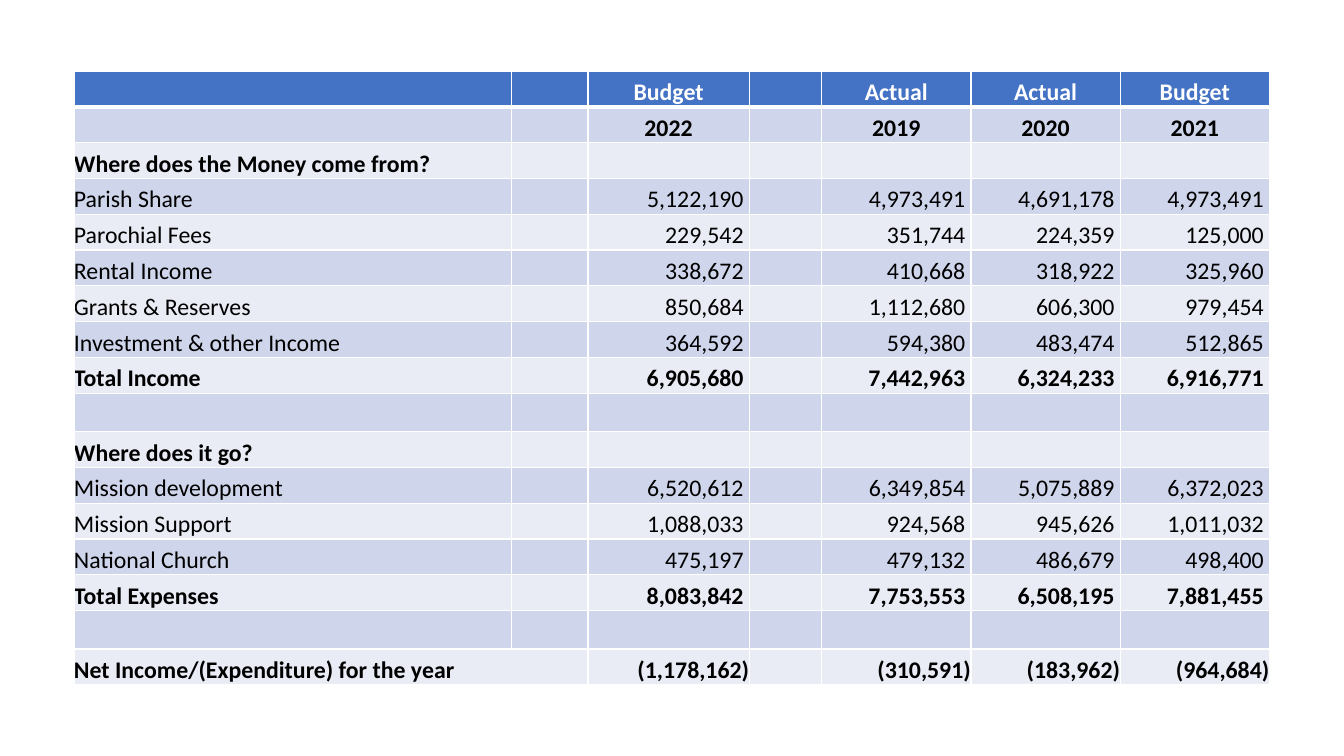
from lxml import etree
from pptx import Presentation
from pptx.dml.color import RGBColor
from pptx.enum import text
from pptx.oxml import ns
from pptx.util import Pt

COLORS = {"header": "4472C4", "dark_band": "CFD5EA", "light_band": "E9EBF5",
          "border": "FFFFFF", "header_text": "FFFFFF", "body_text": "000000"}
COLUMN_WIDTHS = [312.5, 54.7, 115.2, 51.8, 106.6, 106.6, 106.6]
FIGURE_COLUMNS = [2, 4, 5, 6]
ROW_HEIGHT, SPACER_HEIGHT = 25.58, 27.4
HEADING_ROWS = 2

ACCOUNTS = [
    ("", "Budget", "Actual", "Actual", "Budget"),
    ("", "2022", "2019", "2020", "2021"),
    ("Where does the Money come from?",),
    ("Parish Share", "5,122,190", "4,973,491", "4,691,178", "4,973,491"),
    ("Parochial Fees", "229,542", "351,744", "224,359", "125,000"),
    ("Rental Income", "338,672", "410,668", "318,922", "325,960"),
    ("Grants & Reserves", "850,684", "1,112,680", "606,300", "979,454"),
    ("Investment & other Income", "364,592", "594,380", "483,474", "512,865"),
    ("Total Income", "6,905,680", "7,442,963", "6,324,233", "6,916,771"),
    (),
    ("Where does it go?",),
    ("Mission development", "6,520,612", "6,349,854", "5,075,889", "6,372,023"),
    ("Mission Support", "1,088,033", "924,568", "945,626", "1,011,032"),
    ("National Church", "475,197", "479,132", "486,679", "498,400"),
    ("Total Expenses", "8,083,842", "7,753,553", "6,508,195", "7,881,455"),
    (),
    ("Net Income/(Expenditure) for the year",
     "(1,178,162)", "(310,591)", "(183,962)", "(964,684)"),
]


def add_borders(cell, bottom_width):
    """Draw the four borders of a cell."""
    properties = cell._tc.get_or_add_tcPr()
    for side in "LRTB":
        width = bottom_width if side == "B" else 1
        line = etree.SubElement(properties, ns.qn(f"a:ln{side}"), w=str(Pt(width)))
        solid = etree.SubElement(line, ns.qn("a:solidFill"))
        etree.SubElement(solid, ns.qn("a:srgbClr"), val=COLORS["border"])


def style_cell(cell, band, bottom_width):
    """Give a cell its band colour, borders, anchor and margins."""
    add_borders(cell, bottom_width)
    cell.fill.solid()
    cell.fill.fore_color.rgb = RGBColor.from_string(COLORS[band])
    cell.margin_left = cell.margin_right = cell.margin_top = cell.margin_bottom = 0
    cell.vertical_anchor = text.MSO_ANCHOR.BOTTOM


def write_cell(cell, wording, align, color, bold):
    """Write one formatted line into a cell."""
    line = cell.text_frame.paragraphs[0]
    line.text = wording
    line.alignment = align
    for run in line.runs:
        run.font.name = "Calibri"
        run.font.size = Pt(17)
        run.font.bold = bold
        run.font.color.rgb = RGBColor.from_string(COLORS[color])


def is_bold(row, entry):
    """Tell headings, questions, totals and the net line from plain items."""
    return (row < HEADING_ROWS or len(entry) == 1
            or entry[0].startswith(("Total", "Net")))


def fill_row(accounts, row, entry):
    """Style one row and write its label and figures."""
    band = "header" if row == 0 else "dark_band" if row % 2 else "light_band"
    color = "header_text" if row == 0 else "body_text"
    accounts.rows[row].height = Pt(ROW_HEIGHT if entry else SPACER_HEIGHT)
    for column in range(len(COLUMN_WIDTHS)):
        style_cell(accounts.cell(row, column), band, 3 if row == 0 else 1)
    if not entry:
        return
    label, *figures = entry
    bold = is_bold(row, entry)
    if label:
        write_cell(accounts.cell(row, 0), label, text.PP_ALIGN.LEFT, color, bold)
    align = text.PP_ALIGN.CENTER if row < HEADING_ROWS else text.PP_ALIGN.RIGHT
    for column, figure in zip(FIGURE_COLUMNS, figures):
        cell = accounts.cell(row, column)
        write_cell(cell, figure, align, color, bold)
        if row >= HEADING_ROWS and not figure.startswith("("):
            cell.margin_right = Pt(4)


def add_accounts(slide):
    """Add the table of income and expenses."""
    height = sum(ROW_HEIGHT if entry else SPACER_HEIGHT for entry in ACCOUNTS)
    accounts = slide.shapes.add_table(
        len(ACCOUNTS), len(COLUMN_WIDTHS), Pt(52.8), Pt(50.8),
        Pt(sum(COLUMN_WIDTHS)), Pt(height)).table
    for column, width in zip(accounts.columns, COLUMN_WIDTHS):
        column.width = Pt(width)
    for row, entry in enumerate(ACCOUNTS):
        fill_row(accounts, row, entry)
    net_row = len(ACCOUNTS) - 1
    accounts.cell(net_row, 0).merge(accounts.cell(net_row, 1))


def main():
    """Build and save the slide."""
    deck = Presentation()
    deck.slide_width, deck.slide_height = Pt(960), Pt(540)
    add_accounts(deck.slides.add_slide(deck.slide_layouts[6]))
    deck.save("out.pptx")


if __name__ == "__main__":
    main()
